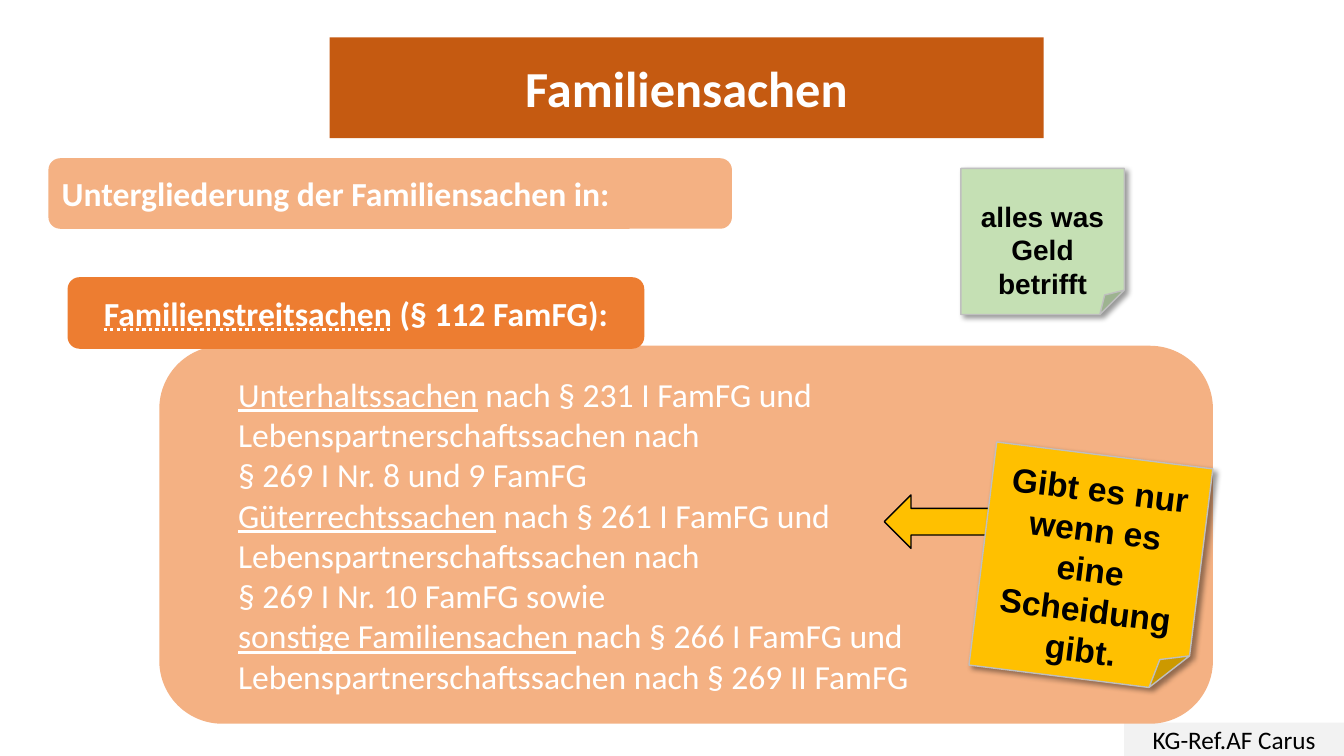
from lxml import etree
from pptx import Presentation
from pptx.dml.color import RGBColor
from pptx.enum import shapes, text
from pptx.oxml import ns
from pptx.util import Inches, Pt

COLORS = {
    "rust": "C55A11", "peach": "F4B183", "orange": "ED7D31", "amber": "FFC000",
    "green": "C5E0B4", "pale": "F2F2F2", "edge": "BFBFBF",
    "white": "FFFFFF", "black": "000000",
}
GEOMETRY = shapes.MSO_SHAPE
CENTER, LEFT = text.PP_ALIGN.CENTER, text.PP_ALIGN.LEFT
SINGLE = text.MSO_UNDERLINE.SINGLE_LINE
DOTTED = text.MSO_UNDERLINE.DOTTED_LINE

# A paragraph is a list of (text, underline) runs; "\n" is a line break.
TITLE = {"at": (3.27, 0.37, 7.08, 1), "fill": "rust", "size": 36, "bold": True,
         "paragraphs": [[("Familiensachen", None)]]}

NOTE = {"geometry": GEOMETRY.FOLDED_CORNER, "line": "edge", "shadow": True,
        "font": "Arial", "color": "black", "bold": True, "top_inset": 0.45}

BOXES = [
    {"at": (0.48, 1.57, 6.78, 0.7), "fill": "peach", "bold": True, "align": LEFT,
     "paragraphs": [[("Untergliederung der Familiensachen in:", None)]]},
    {"at": (11.15, 7.17, 2.18, 0.33), "fill": "pale", "size": 18, "color": "black",
     "geometry": GEOMETRY.RECTANGLE,
     "paragraphs": [[("KG-Ref.AF Carus", None)]]},
    {**NOTE, "at": (9.53, 1.67, 1.62, 1.45), "fill": "green", "size": 20,
     "paragraphs": [[("alles was Geld", None)], [("betrifft", None)]]},
    {"at": (1.58, 3.43, 10.45, 3.75), "fill": "peach", "align": LEFT, "level": 1,
     "paragraphs": [
         [("Unterhaltssachen", SINGLE),
          (" nach § 231 I FamFG und Lebenspartnerschaftssachen nach\n"
           "§ 269 I Nr. 8 und 9 FamFG", None)],
         [("Güterrechtssachen", SINGLE),
          (" nach § 261 I FamFG und Lebenspartnerschaftssachen nach\n"
           "§ 269 I Nr. 10 FamFG sowie", None)],
         [("sonstige Familiensachen ", SINGLE),
          ("nach § 266 I FamFG und Lebenspartnerschaftssachen "
           "nach § 269 II FamFG", None)],
     ]},
    {"at": (0.67, 2.75, 5.72, 0.71), "fill": "orange", "bold": True,
     "paragraphs": [[("Familienstreitsachen", DOTTED), (" (§ 112 FamFG):", None)]]},
    {"at": (8.77, 4.91, 1.07, 0.53), "fill": "amber", "line": "black",
     "geometry": GEOMETRY.RIGHT_ARROW, "rotation": 180},
    {**NOTE, "at": (9.74, 4.51, 2.16, 2.23), "fill": "amber", "rotation": 7.1,
     "paragraphs": [[("Gibt es nur wenn es eine Scheidung", None)], [("gibt.", None)]]},
]


def rgb(name):
    return RGBColor.from_string(COLORS[name])


def add_soft_shadow(shape):
    effects = shape.element.spPr.find(ns.qn("a:effectLst"))
    shadow = etree.SubElement(effects, ns.qn("a:outerShdw"), blurRad=str(Pt(4)),
                              dist=str(Pt(3)), dir=str(45 * 60000),
                              algn="tl", rotWithShape="0")
    color = etree.SubElement(shadow, ns.qn("a:srgbClr"), val=COLORS["black"])
    etree.SubElement(color, ns.qn("a:alpha"), val="40000")


def paint(shape, box):
    shape.fill.solid()
    shape.fill.fore_color.rgb = rgb(box["fill"])
    if "line" in box:
        shape.line.color.rgb = rgb(box["line"])
        shape.line.width = Pt(1)
    else:
        shape.line.fill.background()


def write(shape, box):
    frame = shape.text_frame
    frame_format = {
        "word_wrap": True, "vertical_anchor": text.MSO_ANCHOR.MIDDLE,
        "margin_left": Inches(0.1), "margin_right": Inches(0.1),
        "margin_top": Inches(box.get("top_inset", 0.05)),
        "margin_bottom": Inches(0.05),
    }
    for name, value in frame_format.items():
        setattr(frame, name, value)
    font_format = {"name": box.get("font", "Calibri"), "size": Pt(box.get("size", 24)),
                   "bold": box.get("bold", False)}
    for index, runs in enumerate(box["paragraphs"]):
        paragraph = frame.add_paragraph() if index else frame.paragraphs[0]
        paragraph.alignment = box.get("align", CENTER)
        if "level" in box:
            paragraph.level = box["level"]
            properties = paragraph._p.get_or_add_pPr()
            properties.set("marL", str(Inches(0.5)))
            properties.set("indent", "0")
        for content, underline in runs:
            for line_number, line in enumerate(content.split("\n")):
                if line_number:
                    paragraph.add_line_break()
                run = paragraph.add_run()
                run.text = line
                for name, value in {**font_format, "underline": underline}.items():
                    setattr(run.font, name, value)
                run.font.color.rgb = rgb(box.get("color", "white"))


def add_title(slide):
    title = slide.shapes.title
    title.left, title.top, title.width, title.height = map(Inches, TITLE["at"])
    outline = etree.SubElement(title.element.spPr, ns.qn("a:prstGeom"), prst="roundRect")
    etree.SubElement(outline, ns.qn("a:avLst"))
    paint(title, TITLE)
    write(title, TITLE)


def add_box(slide, box):
    geometry = box.get("geometry", GEOMETRY.ROUNDED_RECTANGLE)
    shape = slide.shapes.add_shape(geometry, *map(Inches, box["at"]))
    shape.rotation = box.get("rotation", 0)
    paint(shape, box)
    shape.shadow.inherit = False
    if box.get("shadow"):
        add_soft_shadow(shape)
    if "paragraphs" in box:
        write(shape, box)


def main():
    presentation = Presentation()
    presentation.slide_width, presentation.slide_height = Inches(13.33), Inches(7.5)
    slide = presentation.slides.add_slide(presentation.slide_layouts.get_by_name("Title Only"))
    add_title(slide)
    for box in BOXES:
        add_box(slide, box)
    presentation.save("out.pptx")


if __name__ == "__main__":
    main()
